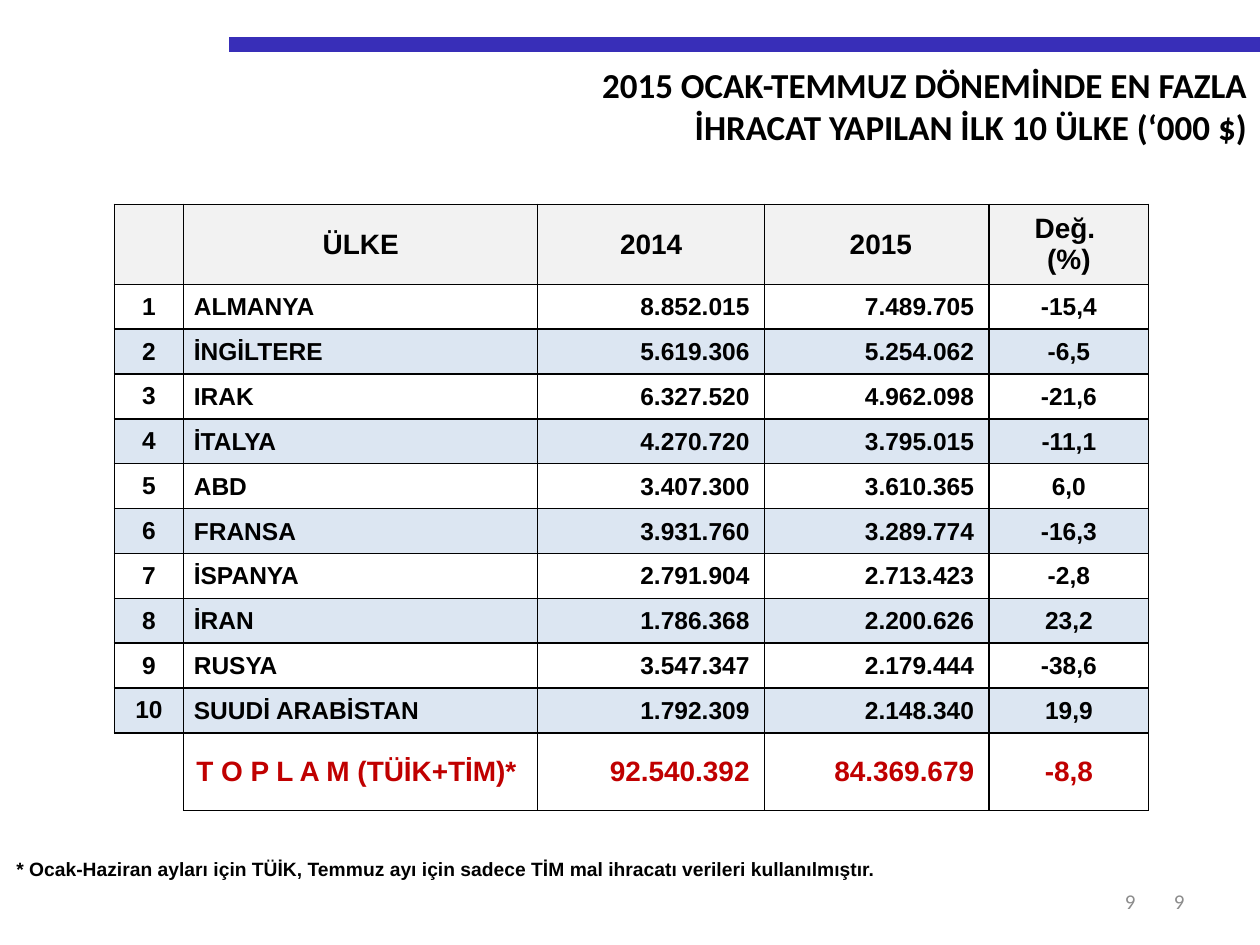
from lxml.etree import SubElement
from pptx import Presentation
from pptx.dml.color import RGBColor
from pptx.enum.shapes import MSO_CONNECTOR
from pptx.enum.text import MSO_ANCHOR, MSO_AUTO_SIZE, PP_ALIGN as ALIGN
from pptx.oxml.ns import qn
from pptx.util import Pt

BLACK = RGBColor(0, 0, 0)
WHITE = RGBColor(255, 255, 255)
RED = RGBColor(0xC0, 0, 0)
INDIGO = RGBColor(0x38, 0x2E, 0xB8)
GREY = RGBColor(0x8C, 0x8C, 0x8C)
HEADER_FILL = RGBColor(0xF2, 0xF2, 0xF2)
BAND_FILL = RGBColor(0xDC, 0xE6, 0xF2)

HEADER = ["", "ÜLKE", "2014", " 2015", "Değ. \n(%)"]
COUNTRIES = [
    ("ALMANYA", "8.852.015", "7.489.705", "-15,4"),
    ("İNGİLTERE", "5.619.306", "5.254.062", "-6,5"),
    ("IRAK", "6.327.520", "4.962.098", "-21,6"),
    ("İTALYA", "4.270.720", "3.795.015", "-11,1"),
    ("ABD", "3.407.300", "3.610.365", "6,0"),
    ("FRANSA", "3.931.760", "3.289.774", "-16,3"),
    ("İSPANYA", "2.791.904", "2.713.423", "-2,8"),
    ("İRAN", "1.786.368", "2.200.626", "23,2"),
    ("RUSYA", "3.547.347", "2.179.444", "-38,6"),
    ("SUUDİ ARABİSTAN", "1.792.309", "2.148.340", "19,9"),
]
TOTAL = ["", "T O P L A M (TÜİK+TİM)*", "92.540.392", "84.369.679", "-8,8"]

# Cell margins in points: left, top, right, bottom
WIDE = (7.2, 3.6, 7.2, 3.6)
NAME = (5.76, 0.72, 0, 0)
NUMBER = (0.72, 0.72, 8.64, 0)
TIGHT = (0.72, 0.72, 0.72, 0)
COLUMN_WIDTHS = [39.7, 202.3, 129.7, 128.3, 91.1]
COLUMN_MARGINS = [WIDE, NAME, NUMBER, NUMBER, TIGHT]
COLUMN_ALIGNS = [ALIGN.CENTER, ALIGN.LEFT, ALIGN.RIGHT, ALIGN.RIGHT, ALIGN.CENTER]


def write_text(text_frame, text, font_name, size, color, bold, align):
    text_frame.text = text
    for paragraph in text_frame.paragraphs:
        paragraph.alignment = align
        for run in paragraph.runs:
            font = run.font
            font.name, font.size, font.bold = font_name, Pt(size), bold
            font.color.rgb = color


def set_borders(cell, sides):
    """Draw black borders on the given sides (of LRTB) and clear the others."""
    properties = cell._tc.get_or_add_tcPr()
    for side in "LRTB":
        line = SubElement(properties, qn(f"a:ln{side}"), w=str(Pt(1)))
        if side in sides:
            fill = SubElement(line, qn("a:solidFill"))
            SubElement(fill, qn("a:srgbClr"), val=str(BLACK))
        else:
            SubElement(line, qn("a:noFill"))


def format_cell(cell, text, size, color, align, margins, sides="LRTB", fill=None):
    set_borders(cell, sides)
    if fill is None:
        cell.fill.background()
    else:
        cell.fill.solid()
        cell.fill.fore_color.rgb = fill
    cell.vertical_anchor = MSO_ANCHOR.MIDDLE
    (cell.margin_left, cell.margin_top,
     cell.margin_right, cell.margin_bottom) = map(Pt, margins)
    write_text(cell.text_frame, text, "Arial", size, color, True, align)


def add_plain_table(slide, left, top, column_widths, row_heights):
    table = slide.shapes.add_table(
        len(row_heights), len(column_widths), Pt(left), Pt(top),
        Pt(sum(column_widths)), Pt(sum(row_heights))).table
    table.first_row = table.horz_banding = False
    for column, width in zip(table.columns, column_widths):
        column.width = Pt(width)
    for row, height in zip(table.rows, row_heights):
        row.height = Pt(height)
    return table


def add_top_rule(slide, left, top, width):
    rule = slide.shapes.add_connector(
        MSO_CONNECTOR.STRAIGHT, Pt(left), Pt(top), Pt(left + width), Pt(top))
    rule.line.color.rgb = INDIGO
    rule.line.width = Pt(8.5)
    SubElement(rule._element.spPr, qn("a:effectLst"))


def place_title(slide, left, top, width, height):
    title = slide.shapes.title
    title.left, title.top, title.width, title.height = map(Pt, (left, top, width, height))
    text_frame = title.text_frame
    text_frame.word_wrap = True
    text_frame.auto_size = MSO_AUTO_SIZE.NONE
    text_frame.vertical_anchor = MSO_ANCHOR.TOP
    write_text(text_frame,
               "2015 OCAK-TEMMUZ DÖNEMİNDE EN FAZLA\nİHRACAT YAPILAN İLK 10 ÜLKE (‘000 $)",
               "Calibri", 20, BLACK, True, ALIGN.RIGHT)


def add_export_table(slide, left, top):
    heights = [45.7] + [25.63] * len(COUNTRIES) + [44.4]
    table = add_plain_table(slide, left, top, COLUMN_WIDTHS, heights)
    last = len(heights) - 1
    # Header
    for column, text in enumerate(HEADER):
        format_cell(table.cell(0, column), text, 16, BLACK, ALIGN.CENTER, WIDE,
                    fill=HEADER_FILL)
    # Ranked countries, every second row shaded
    for rank, country in enumerate(COUNTRIES, start=1):
        for column, text in enumerate([str(rank), *country]):
            format_cell(table.cell(rank, column), text, 14, BLACK,
                        COLUMN_ALIGNS[column], COLUMN_MARGINS[column],
                        fill=WHITE if rank % 2 else BAND_FILL)
    # Total, with an open corner under the ranks
    for column, text in enumerate(TOTAL):
        format_cell(table.cell(last, column), text, 16, RED, COLUMN_ALIGNS[column],
                    WIDE if column == 1 else COLUMN_MARGINS[column],
                    sides="LRTB" if column else "RT")


def add_footnote(slide, left, top, width, height):
    table = add_plain_table(slide, left, top, [width], [height])
    format_cell(table.cell(0, 0),
                "* Ocak-Haziran ayları için TÜİK, Temmuz ayı için sadece TİM mal "
                "ihracatı verileri kullanılmıştır.",
                11, BLACK, ALIGN.LEFT, TIGHT, sides="")


def add_page_number(slide, left, top, width, height):
    box = slide.shapes.add_textbox(Pt(left), Pt(top), Pt(width), Pt(height))
    box.text_frame.word_wrap = True
    box.text_frame.vertical_anchor = MSO_ANCHOR.MIDDLE
    write_text(box.text_frame, "9", "Calibri", 12, GREY, False, ALIGN.RIGHT)


def main():
    presentation = Presentation()
    presentation.slide_width, presentation.slide_height = Pt(720), Pt(540)
    slide = presentation.slides.add_slide(presentation.slide_layouts[5])
    add_top_rule(slide, 131, 25.3, 589)
    place_title(slide, 76.3, 32.4, 643.7, 55.4)
    add_export_table(slide, 65.3, 116.8)
    add_footnote(slide, 8.6, 485.3, 532.8, 22.3)
    add_page_number(slide, 516.2, 500.4, 167.8, 28.8)
    add_page_number(slide, 504.7, 500.4, 151.2, 28.8)
    presentation.save("out.pptx")


if __name__ == "__main__":
    main()
